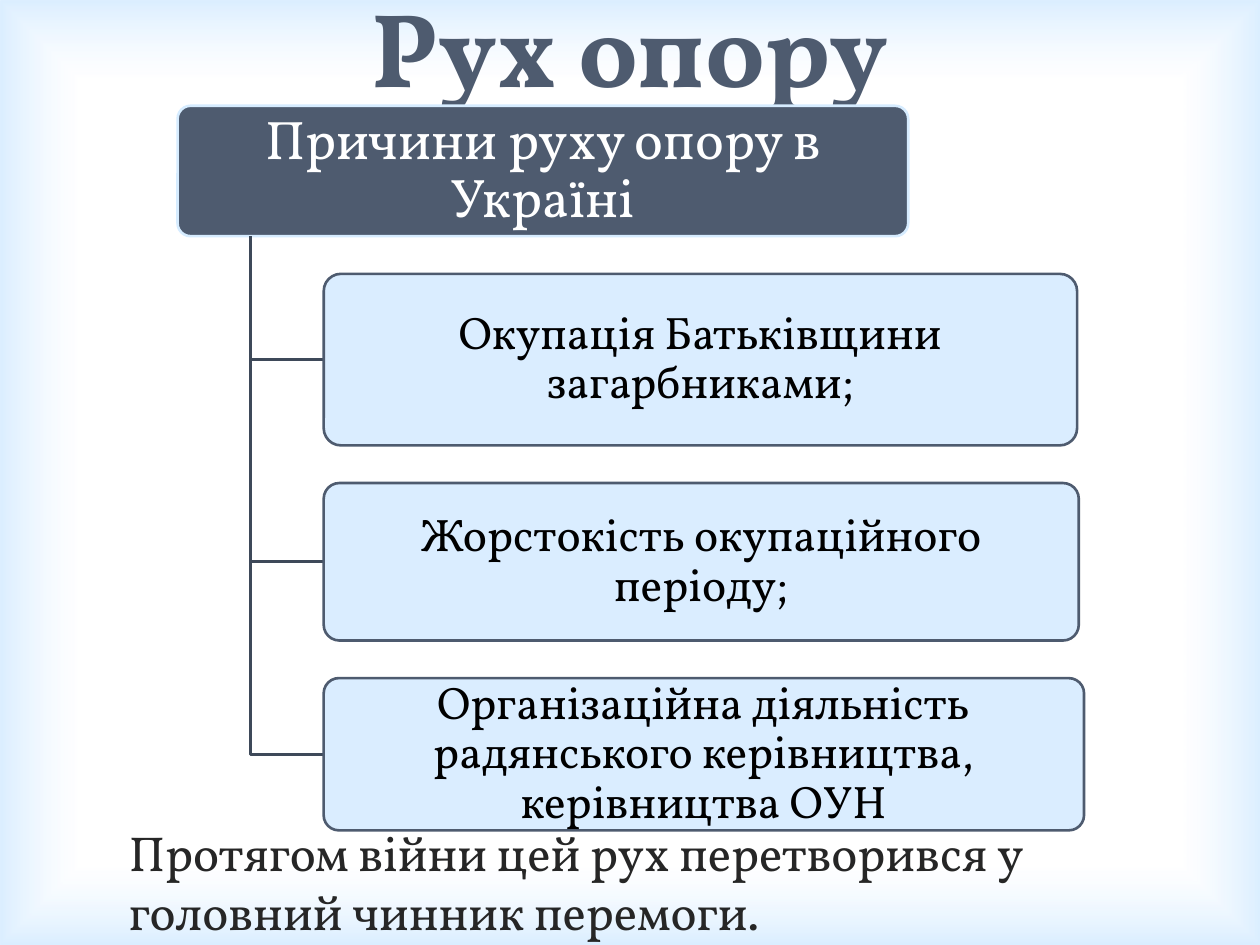
from lxml import etree
from pptx import Presentation
from pptx.dml.color import RGBColor
from pptx.enum.shapes import MSO_SHAPE
from pptx.enum.text import MSO_ANCHOR, PP_ALIGN
from pptx.oxml import parse_xml
from pptx.oxml.ns import qn
from pptx.util import Pt

RECT, ROUND = MSO_SHAPE.RECTANGLE, MSO_SHAPE.ROUNDED_RECTANGLE
TOP, MID = MSO_ANCHOR.TOP, MSO_ANCHOR.MIDDLE
LEFT, MIDDLE = PP_ALIGN.LEFT, PP_ALIGN.CENTER
WIDE, HIGH = 720, 540

GLOW = """<a:gradFill rotWithShape="1"
 xmlns:a="http://schemas.openxmlformats.org/drawingml/2006/main"><a:gsLst>
 <a:gs pos="83000"><a:srgbClr val="FFFFFF"><a:alpha val="11000"/></a:srgbClr></a:gs>
 <a:gs pos="100000"><a:srgbClr val="61B6FF"><a:alpha val="23000"/></a:srgbClr></a:gs>
 </a:gsLst><a:path path="rect">
 <a:fillToRect l="50000" t="50000" r="50000" b="50000"/></a:path></a:gradFill>"""


def color(code):
    return RGBColor.from_string(code)


class Deck:
    font = "Vollkorn"
    slate, pale, wire = "4E5B6F", "D6ECFF", "3E4959"

    def __init__(self):
        self.prs = Presentation()
        self.prs.slide_width, self.prs.slide_height = Pt(WIDE), Pt(HIGH)
        self.slide = self.prs.slides.add_slide(self.prs.slide_layouts[5])
        self.shapes = self.slide.shapes

    def label(self, shape, text, size, tint, align, anchor, bold=False):
        frame = shape.text_frame
        frame.text = text
        frame.word_wrap = True
        frame.vertical_anchor = anchor
        para = frame.paragraphs[0]
        para.alignment = align
        font = para.runs[0].font
        font.name, font.size, font.bold = self.font, Pt(size), bold
        font.color.rgb = color(tint)
        return frame

    def glow(self):
        shape = self.shapes.add_shape(RECT, 0, 0, Pt(WIDE), Pt(HIGH))
        shape.shadow.inherit = False
        shape.line.fill.background()
        shape.fill.background()
        props = shape._element.spPr
        props.replace(props.find(qn("a:noFill")), parse_xml(GLOW))
        # Send behind the title
        self.shapes._spTree.insert(2, shape._element)

    def title(self, text, x, y, w, h):
        shape = self.shapes.title
        shape.left, shape.top, shape.width, shape.height = map(Pt, (x, y, w, h))
        self.label(shape, text, 60, self.slate, MIDDLE, TOP, True)

    def box(self, text, x, y, w, h, size, fill, line, tint, alpha=100):
        shape = self.shapes.add_shape(ROUND, *map(Pt, (x, y, w, h)))
        shape.adjustments[0] = 0.1
        shape.shadow.inherit = False
        shape.fill.solid()
        shape.fill.fore_color.rgb = color(fill)
        if alpha < 100:
            tone = shape._element.spPr.find(qn("a:solidFill"))[0]
            etree.SubElement(tone, qn("a:alpha")).set("val", str(alpha * 1000))
        shape.line.color.rgb = color(line)
        shape.line.width = Pt(1.5)
        frame = self.label(shape, text, size, tint, MIDDLE, MID)
        frame.margin_left = frame.margin_right = Pt(4)
        frame.margin_top = frame.margin_bottom = Pt(3)
        frame.paragraphs[0].line_spacing = 0.9

    def elbow(self, x, y, right, low):
        pen = self.shapes.build_freeform(Pt(x), Pt(y))
        pen.add_line_segments([(Pt(x), Pt(low)), (Pt(right), Pt(low))], close=False)
        shape = pen.convert_to_shape()
        shape.shadow.inherit = False
        shape.fill.background()
        shape.line.color.rgb = color(self.wire)
        shape.line.width = Pt(1.5)

    def note(self, text, x, y, w, h):
        shape = self.shapes.add_textbox(*map(Pt, (x, y, w, h)))
        self.label(shape, text, 28, "262626", LEFT, TOP)


def main():
    deck = Deck()

    # Backdrop and title
    deck.glow()
    deck.title("Рух опору", 0, -13.5, WIDE, 82.5)

    # Root of the tree
    x, y, w, h = 101.5, 60.5, 417.5, 74.5
    deck.box("Причини руху опору в Україні", x, y, w, h, 31,
             deck.slate, deck.pale, "FFFFFF")

    # Causes: each hangs from the trunk, one gap below the last
    trunk, left, gap = x + w / 10, 185, 21.5
    low = y + h
    causes = [
        ("Окупація Батьківщини загарбниками;", 430.5, 98),
        ("Жорстокість окупаційного періоду;", 431.5, 90),
        ("Організаційна діяльність радянського керівництва, керівництва ОУН",
         434.5, 87),
    ]
    top = low + gap
    for text, wide, tall in causes:
        deck.elbow(trunk, low, left, top + tall / 2)
        deck.box(text, left, top, wide, tall, 26,
                 deck.pale, deck.slate, "000000", 90)
        top += tall + gap

    # Closing remark
    deck.note("Протягом війни цей рух перетворився у головний чинник перемоги.",
              66.5, 466.5, 649.5, 73.5)

    deck.prs.save("out.pptx")


if __name__ == "__main__":
    main()
